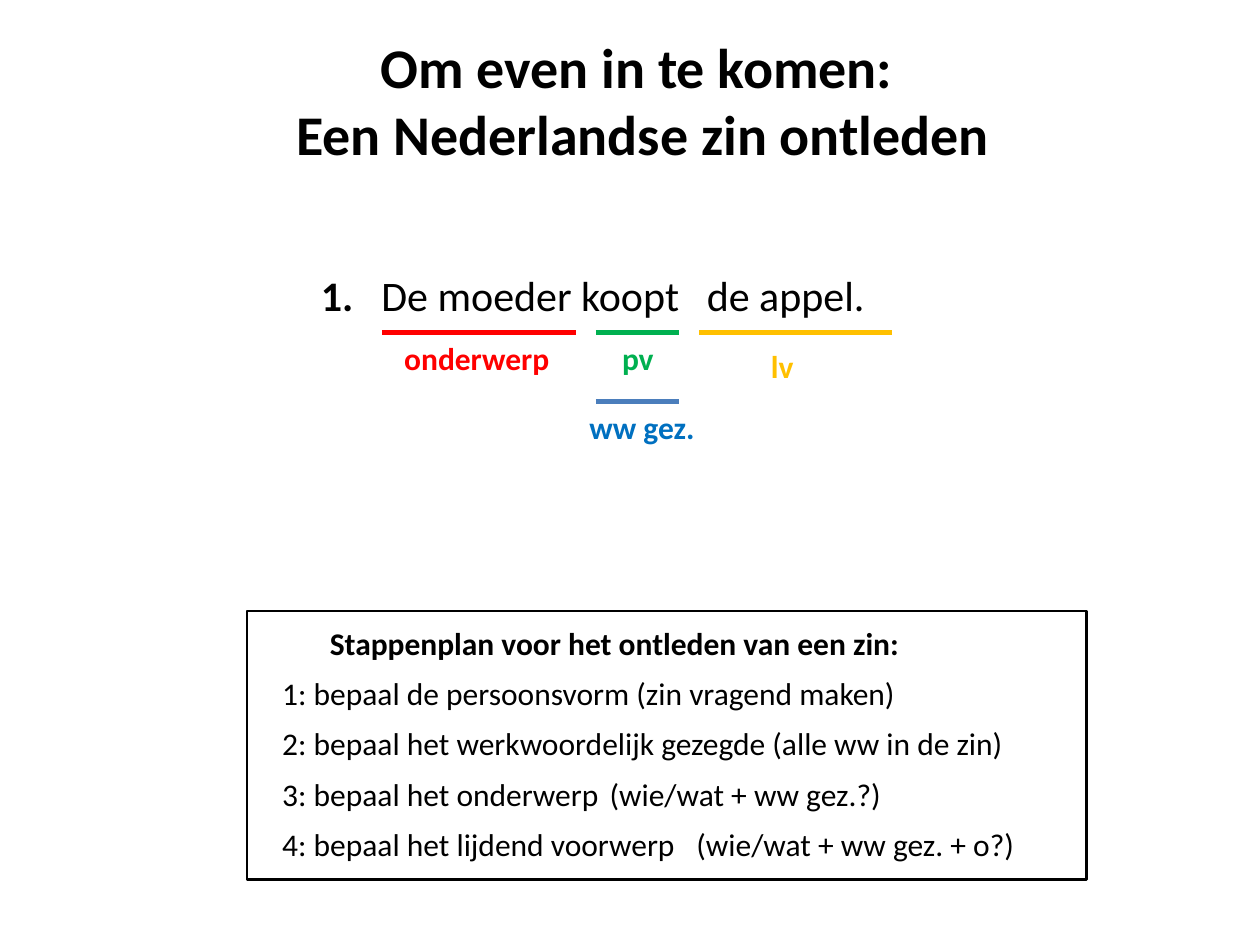
"""Build a slide on parsing a Dutch sentence."""
import pptx
import pptx.chart.data
import pptx.dml.color
import pptx.enum.shapes
import pptx.enum.text
import pptx.util
from lxml import etree
from pptx.oxml.ns import qn

Cm = pptx.util.Cm
ALIGN = pptx.enum.text.PP_ALIGN

title_lines = ["Om even in te komen: ", "Een Nederlandse zin ontleden"]
sentence = [("1.", True), ("\tDe moeder koopt\tde appel.", False)]
sentence_tabs = [1.22, 7.78]
parts = [
    {"label": "onderwerp", "color": "subject", "line": (7.7, 11.61), "y": 6.71,
     "label_at": (7.9, 6.71), "width": 3.86},
    {"label": "pv", "color": "verb", "line": (12.01, 13.69), "y": 6.71,
     "label_at": (12.29, 6.71), "width": 2.67},
    {"label": "ww gez.", "color": "predicate", "line": (12.01, 13.69), "y": 8.1,
     "label_at": (11.63, 8.1), "width": 2.67, "line_color": "predicate_line"},
    {"label": "lv", "color": "object", "line": (14.1, 17.98), "y": 6.71,
     "label_at": (15.29, 6.88), "width": 2.67},
]
plan_heading = "Stappenplan voor het ontleden van een zin:"
steps = [
    ("1: bepaal de persoonsvorm (zin vragend maken)", 13.59, None),
    ("2: bepaal het werkwoordelijk gezegde (alle ww in de zin)", 15.19, None),
    ("3: bepaal het onderwerp", 7.82, ("(wie/wat + ww gez.?)", 12.04, 6.05)),
    ("4: bepaal het lijdend voorwerp", 8.61, ("(wie/wat + ww gez. + o?)", 13.79, 7.01)),
]
theme = {
    "font": "Calibri",
    "title": 32, "sentence": 24, "body": 18,
    "text": "000000", "subject": "FF0000", "verb": "00B050",
    "predicate": "0070C0", "predicate_line": "4B7EBC", "object": "FFC000",
    "underline": 3, "frame": 1.5,
}
PLAN_LEFT, PLAN_TOP, ROW_PITCH, ROW_HEIGHT = 5.44, 12.46, 1.01, 1.02


def rgb(name):
    return pptx.dml.color.RGBColor.from_string(theme[name])


def apply(target, formats):
    for attribute, value in formats.items():
        setattr(target, attribute, value)


def add_text(slide, lines, left, top, width, height=ROW_HEIGHT, size="body",
             color="text", align=None, wrap=True):
    box = slide.shapes.add_textbox(Cm(left), Cm(top), Cm(width), Cm(height))
    frame = box.text_frame
    apply(frame, {"word_wrap": wrap,
                  "auto_size": pptx.enum.text.MSO_AUTO_SIZE.SHAPE_TO_FIT_TEXT})
    for index, line in enumerate(lines):
        paragraph = frame.add_paragraph() if index else frame.paragraphs[0]
        paragraph.alignment = align
        for wording, bold in line:
            run = paragraph.add_run()
            run.text = wording
            apply(run.font, {"name": theme["font"], "bold": bold,
                             "size": pptx.util.Pt(theme[size])})
            run.font.color.rgb = rgb(color)
    return frame


def add_tabs(paragraph, positions):
    tab_list = etree.SubElement(paragraph._p.get_or_add_pPr(), qn("a:tabLst"))
    for position in positions:
        etree.SubElement(tab_list, qn("a:tab"), pos=str(Cm(position)), algn="l")


def add_part(slide, part):
    start, end = part["line"]
    underline = slide.shapes.add_connector(
        pptx.enum.shapes.MSO_CONNECTOR.STRAIGHT,
        Cm(start), Cm(part["y"]), Cm(end), Cm(part["y"]))
    underline.line.color.rgb = rgb(part.get("line_color", part["color"]))
    underline.line.width = pptx.util.Pt(theme["underline"])
    etree.SubElement(underline._element.spPr, qn("a:effectLst"))
    add_text(slide, [[(part["label"], True)]], *part["label_at"], part["width"],
             color=part["color"])


def add_plan(slide):
    border = slide.shapes.add_shape(pptx.enum.shapes.MSO_SHAPE.RECTANGLE,
                                    Cm(4.98), Cm(12.32), Cm(16.92), Cm(5.41))
    border.shadow.inherit = False
    border.fill.background()
    border.line.color.rgb = rgb("text")
    border.line.width = pptx.util.Pt(theme["frame"])
    add_text(slide, [[(plan_heading, True)]], 6.4, PLAN_TOP, 13.82)
    for row, (step, width, question) in enumerate(steps, start=1):
        top = PLAN_TOP + row * ROW_PITCH
        add_text(slide, [[(step, False)]], PLAN_LEFT, top, width)
        if question:
            wording, left, question_width = question
            add_text(slide, [[(wording, False)]], left, top, question_width, wrap=False)


def main():
    deck = pptx.Presentation()
    apply(deck, {"slide_width": Cm(25.4), "slide_height": Cm(19.05)})
    slide = deck.slides.add_slide(deck.slide_layouts[6])
    add_text(slide, [[(line, True)] for line in title_lines], 0.76, 0.53, 24.41, 3,
             size="title", align=ALIGN.CENTER)
    sentence_frame = add_text(slide, [sentence], 6.22, 5.31, 13.79, 1.27, size="sentence")
    add_tabs(sentence_frame.paragraphs[0], sentence_tabs)
    for part in parts:
        add_part(slide, part)
    add_plan(slide)
    deck.save("out.pptx")


if __name__ == "__main__":
    main()
